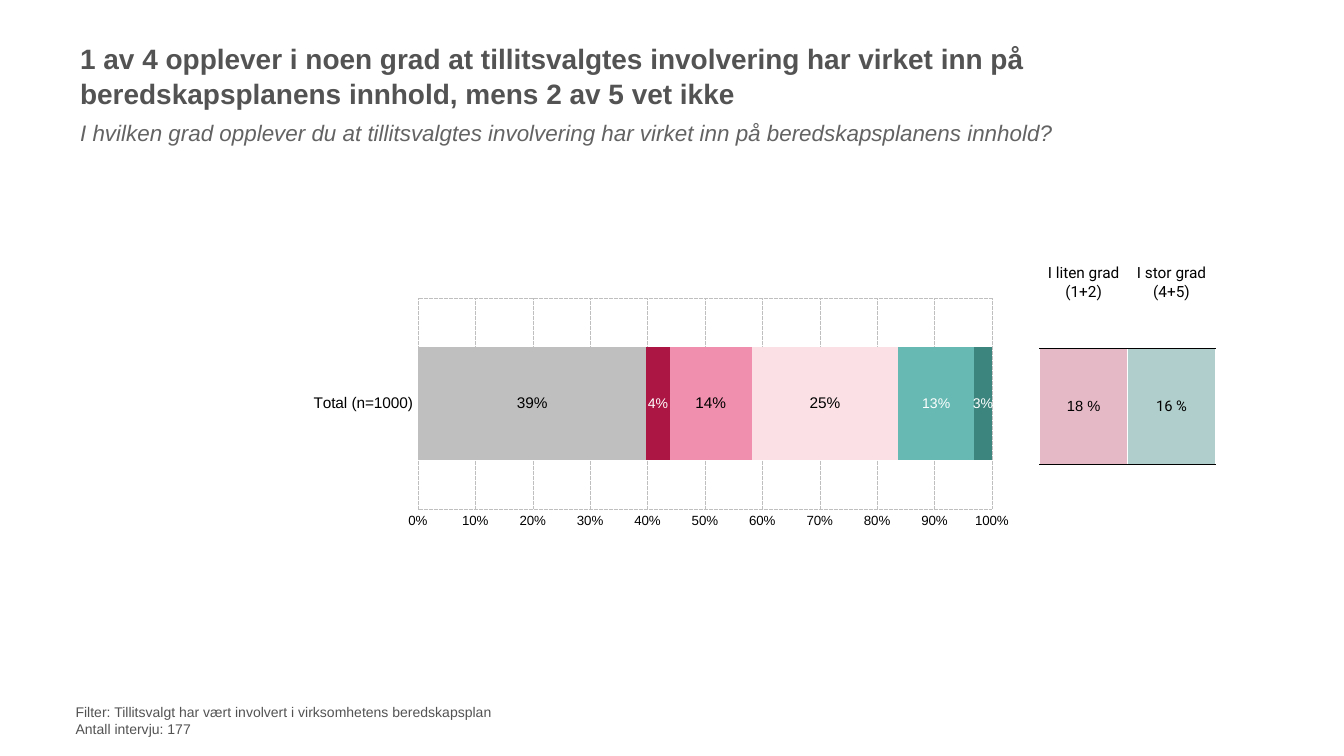
from lxml import etree
from pptx import Presentation
from pptx.chart.data import CategoryChartData
from pptx.dml.color import RGBColor
from pptx.enum import chart as ch, dml, text
from pptx.oxml import parse_xml
from pptx.oxml.ns import nsdecls, qn
from pptx.util import Inches, Pt

COLORS = {
    "black": "000000", "white": "FFFFFF", "heading": "535353", "question": "626362",
    "grid": "BFBFBF", "grey": "BFBFBF", "crimson": "AB1644", "pink": "F190AE",
    "blush": "FBE1E5", "teal": "66BAB3", "deep teal": "3B857E", "rose": "E6B9C7",
}

# box, paragraphs, anchor, line spacing, font
TEXTS = [
    ((1.53, 0.47, 23.66, 2.04),
     ["1 av 4 opplever i noen grad at tillitsvalgtes involvering har virket inn på "
      "beredskapsplanens innhold, mens 2 av 5 vet ikke"],
     "MIDDLE", 1.05, {"size": Pt(40), "bold": True}, "heading"),
    ((1.53, 2.31, 23.66, 0.73),
     ["I hvilken grad opplever du at tillitsvalgtes involvering har virket inn på "
      "beredskapsplanens innhold?"],
     "TOP", 1, {"size": Pt(32), "italic": True}, "question"),
    ((1.44, 13.89, 19.18, 0.8),
     ["Filter: Tillitsvalgt har vært involvert i virksomhetens beredskapsplan",
      "Antall intervju: 177"],
     "MIDDLE", 1, {"size": Pt(20)}, "heading"),
]

CATEGORY = "Total (n=1000)"
# share, bar colour, label colour, label size
ANSWERS = [
    (0.39, "grey", "black", 22),
    (0.04, "crimson", "white", 20),
    (0.14, "pink", "black", 22),
    (0.25, "blush", "black", 22),
    (0.13, "teal", "white", 20),
    (0.03, "deep teal", "white", 20),
]
CHART_BOX = (1.53, 4.31, 18.58, 6.38)
PLOT_AREA = {"x": 0.364, "y": 0.252, "w": 0.613, "h": 0.655}

# heading, share, fill, opacity in percent, font of the share
SUMMARY = [
    ("I liten grad\v(1+2)", "18 %", "rose", 100, "Arial"),
    ("I stor grad\v(4+5)", "16 %", "deep teal", 40, "Roboto"),
]
SUMMARY_BOX = (20.63, 4.31, 3.49, 4.91)
ROW_HEIGHTS = (2.6, 2.31)


def rgb(name):
    return RGBColor.from_string(COLORS[name])


def style_font(font, color, **values):
    for key, value in {"name": "Arial", **values}.items():
        setattr(font, key, value)
    font.color.rgb = rgb(color)


def add_text(slide, box, lines, anchor, spacing, font, color):
    frame = slide.shapes.add_textbox(*map(Inches, box)).text_frame
    frame.word_wrap = True
    frame.vertical_anchor = text.MSO_ANCHOR[anchor]
    for side in ("left", "right", "top", "bottom"):
        setattr(frame, f"margin_{side}", Inches(0.06))
    frame.text = "\n".join(lines)
    for paragraph in frame.paragraphs:
        paragraph.line_spacing = spacing
        style_font(paragraph.font, color, **font)


def add_answer_chart(slide):
    data = CategoryChartData(number_format="0%")
    data.categories = [CATEGORY]
    for share, *_ in ANSWERS:
        data.add_series("", [share])
    chart = slide.shapes.add_chart(
        ch.XL_CHART_TYPE.BAR_STACKED_100, *map(Inches, CHART_BOX), data).chart
    chart.has_legend = chart.has_title = False
    style_font(chart.font, "black", size=Pt(19))

    plot = chart.plots[0]
    plot.gap_width, plot.overlap, plot.vary_by_categories = 85, 100, False
    for series, (_, fill, label_color, size) in zip(plot.series, ANSWERS):
        series.format.fill.solid()
        series.format.fill.fore_color.rgb = rgb(fill)
        labels = series.data_labels
        labels.show_value = True
        labels.number_format, labels.number_format_is_linked = "0%", False
        style_font(labels.font, label_color, size=Pt(size))

    for axis, size in ((chart.category_axis, 22), (chart.value_axis, 19)):
        axis.has_major_gridlines = True
        grid = axis.major_gridlines.format.line
        grid.color.rgb = rgb("grid")
        grid.width, grid.dash_style = Pt(0.25), dml.MSO_LINE.DASH
        axis.format.line.fill.background()
        style_font(axis.tick_labels.font, "black", size=Pt(size))
    value_axis = chart.value_axis
    value_axis.minimum_scale, value_axis.maximum_scale, value_axis.major_unit = 0, 1, 0.1
    value_axis.tick_labels.number_format = "0%"
    value_axis.tick_labels.number_format_is_linked = False
    fix_plot_area(chart)


def fix_plot_area(chart):
    area = chart.plots[0]._element.getparent()
    for old in area.findall(qn("c:layout")):
        area.remove(old)
    places = "".join(f'<c:{key} val="{value}"/>' for key, value in PLOT_AREA.items())
    area.insert(0, parse_xml(
        f'<c:layout {nsdecls("c")}><c:manualLayout><c:layoutTarget val="inner"/>'
        f'<c:xMode val="edge"/><c:yMode val="edge"/>{places}</c:manualLayout></c:layout>'))


def add_rules(cell, sides):
    """Draw thin black borders; sides are lnT and lnB, in that order."""
    for index, side in enumerate(sides):
        cell._tc.get_or_add_tcPr().insert(index, parse_xml(
            f'<a:{side} {nsdecls("a")} w="12700"><a:solidFill>'
            f'<a:srgbClr val="{COLORS["black"]}"/></a:solidFill></a:{side}>'))


def fill_cell(cell, words, font, size):
    cell.text = words
    cell.vertical_anchor = text.MSO_ANCHOR.MIDDLE
    for paragraph in cell.text_frame.paragraphs:
        paragraph.alignment = text.PP_ALIGN.CENTER
        style_font(paragraph.font, "black", name=font, size=Pt(size), bold=False)


def add_summary_table(slide):
    table = slide.shapes.add_table(
        len(ROW_HEIGHTS), len(SUMMARY), *map(Inches, SUMMARY_BOX)).table
    table.first_row = table.horz_banding = False
    for row, height in zip(table.rows, ROW_HEIGHTS):
        row.height = Inches(height)
    for column, (heading, share, fill, opacity, font) in enumerate(SUMMARY):
        top, bottom = table.cell(0, column), table.cell(1, column)
        fill_cell(top, heading, "Roboto", 22)
        top.fill.background()
        add_rules(top, ["lnB"])
        fill_cell(bottom, share, font, 21)
        bottom.fill.solid()
        bottom.fill.fore_color.rgb = rgb(fill)
        if opacity < 100:
            tint = bottom._tc.tcPr.find(".//" + qn("a:srgbClr"))
            etree.SubElement(tint, qn("a:alpha"), val=str(opacity * 1000))
        add_rules(bottom, ["lnT", "lnB"])


def main():
    deck = Presentation()
    deck.slide_width, deck.slide_height = Inches(26.67), Inches(15)
    slide = deck.slides.add_slide(deck.slide_layouts[6])
    add_answer_chart(slide)
    for item in TEXTS:
        add_text(slide, *item)
    add_summary_table(slide)
    deck.save("out.pptx")


if __name__ == "__main__":
    main()
